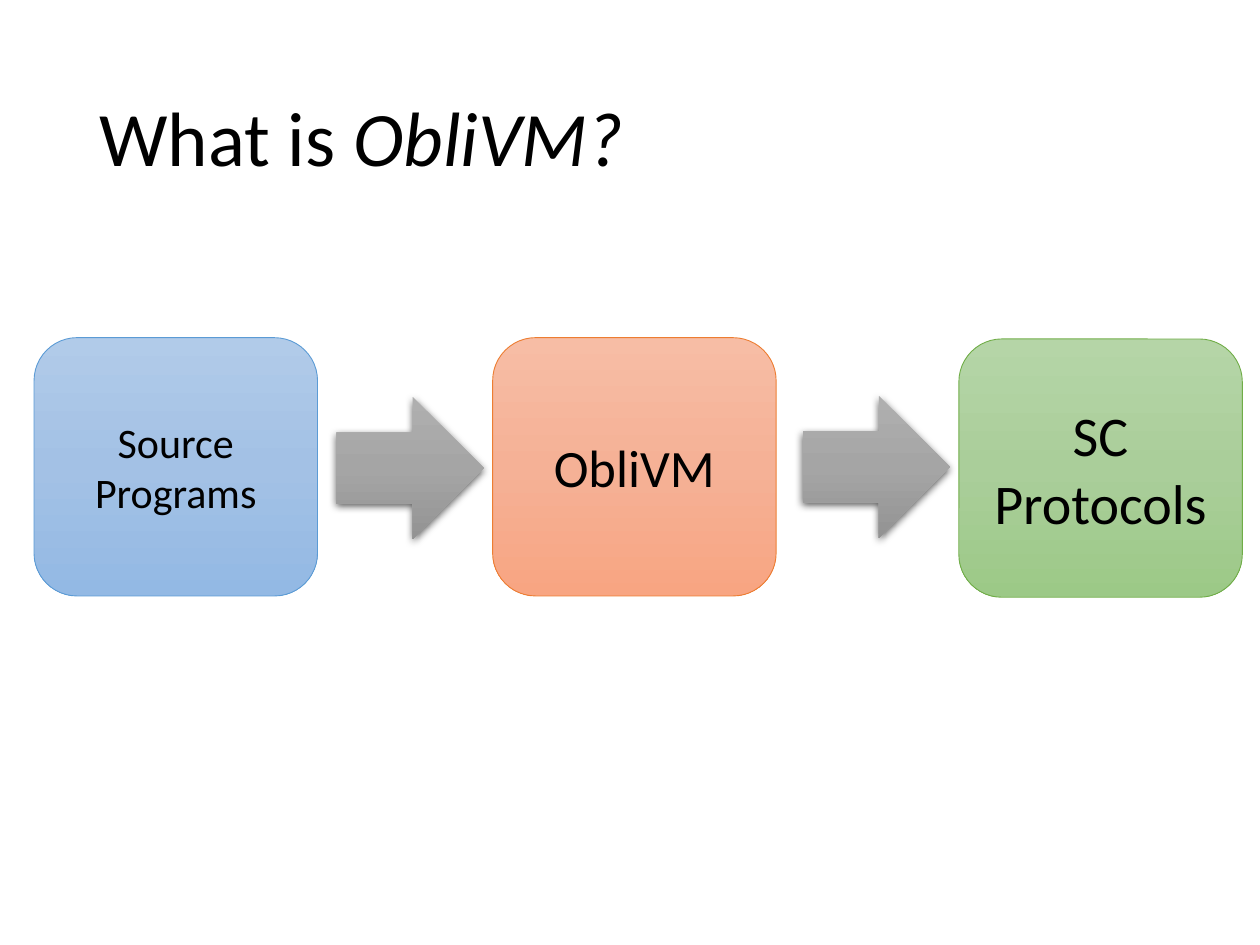
from copy import deepcopy

from lxml.etree import SubElement
from pptx import Presentation
from pptx.dml.color import RGBColor
from pptx.enum.shapes import MSO_SHAPE
from pptx.enum.text import MSO_ANCHOR, PP_ALIGN
from pptx.oxml.ns import qn
from pptx.util import Inches, Pt

BLACK = RGBColor(0x00, 0x00, 0x00)
GREYS = [RGBColor(0xAF, 0xAF, 0xAF), RGBColor(0xA5, 0xA5, 0xA5), RGBColor(0x93, 0x93, 0x93)]
BLUES = [RGBColor(0xB1, 0xCB, 0xE9), RGBColor(0xA3, 0xC1, 0xE5), RGBColor(0x93, 0xB9, 0xE4)]
ORANGES = [RGBColor(0xF7, 0xBD, 0xA5), RGBColor(0xF5, 0xB1, 0x96), RGBColor(0xF8, 0xA5, 0x82)]
GREENS = [RGBColor(0xB5, 0xD5, 0xA7), RGBColor(0xAA, 0xCE, 0x9A), RGBColor(0x9C, 0xC9, 0x87)]
BLUE_LINE = RGBColor(0x5B, 0x9B, 0xD5)
ORANGE_LINE = RGBColor(0xED, 0x7D, 0x31)
GREEN_LINE = RGBColor(0x70, 0xAD, 0x47)

BOX_W, BOX_H = 2.25, 2.05
ARROW_W, ARROW_H = 1.17, 1.13

prs = Presentation()
prs.slide_width, prs.slide_height = Inches(10), Inches(7.5)
slide = prs.slides.add_slide(prs.slide_layouts[6])


def add_gradient_shape(kind, left, top, width, height, colors):
    """Add a shape shaded from top to bottom in three evenly spaced colours."""
    s = slide.shapes.add_shape(kind, Inches(left), Inches(top), Inches(width), Inches(height))
    s.shadow.inherit = False
    s.fill.gradient()
    stops = s._element.spPr.find(".//" + qn("a:gsLst"))
    stops.insert(1, deepcopy(stops[0]))
    for stop, position, color in zip(s.fill.gradient_stops, (0, 0.5, 1), colors):
        stop.position = position
        stop.color.rgb = color
    s.fill.gradient_angle = 270
    return s


def add_run(p, text, **font):
    r = p.add_run()
    r.text = text
    r.font.color.rgb = BLACK
    for name, value in {"name": "Calibri", **font}.items():
        setattr(r.font, name, value)


# Title
title = slide.shapes.add_textbox(Inches(0.69), Inches(0.4), Inches(8.62), Inches(1.45))
tf = title.text_frame
tf.word_wrap = True
tf.vertical_anchor = MSO_ANCHOR.MIDDLE
p = tf.paragraphs[0]
p.line_spacing = 0.9
add_run(p, "What is ", size=Pt(44))
add_run(p, "ObliVM?", size=Pt(44), italic=True)

# Pipeline stages
for text, size, left, top, colors, line in [
    ("Source Programs", 24, 0.27, 2.68, BLUES, BLUE_LINE),
    ("ObliVM", 30, 3.91, 2.68, ORANGES, ORANGE_LINE),
    ("SC Protocols", 32, 7.61, 2.69, GREENS, GREEN_LINE),
]:
    s = add_gradient_shape(MSO_SHAPE.ROUNDED_RECTANGLE, left, top, BOX_W, BOX_H, colors)
    s.line.color.rgb = line
    s.line.width = Pt(0.5)
    tf = s.text_frame
    tf.word_wrap = True
    tf.vertical_anchor = MSO_ANCHOR.MIDDLE
    p = tf.paragraphs[0]
    p.alignment = PP_ALIGN.CENTER
    add_run(p, text, size=Pt(size))

# Arrows between the stages
for left, top in [(2.67, 3.15), (6.37, 3.14)]:
    s = add_gradient_shape(MSO_SHAPE.RIGHT_ARROW, left, top, ARROW_W, ARROW_H, GREYS)
    s.line.fill.background()
    effects = s._element.spPr.find(qn("a:effectLst"))
    shadow = SubElement(effects, qn("a:outerShdw"), blurRad=str(Pt(4.5)), dist=str(Pt(1.5)),
                        dir="5400000", algn="ctr", rotWithShape="0")
    color = SubElement(shadow, qn("a:srgbClr"), val=str(BLACK))
    SubElement(color, qn("a:alpha"), val="63000")

prs.save("out.pptx")
